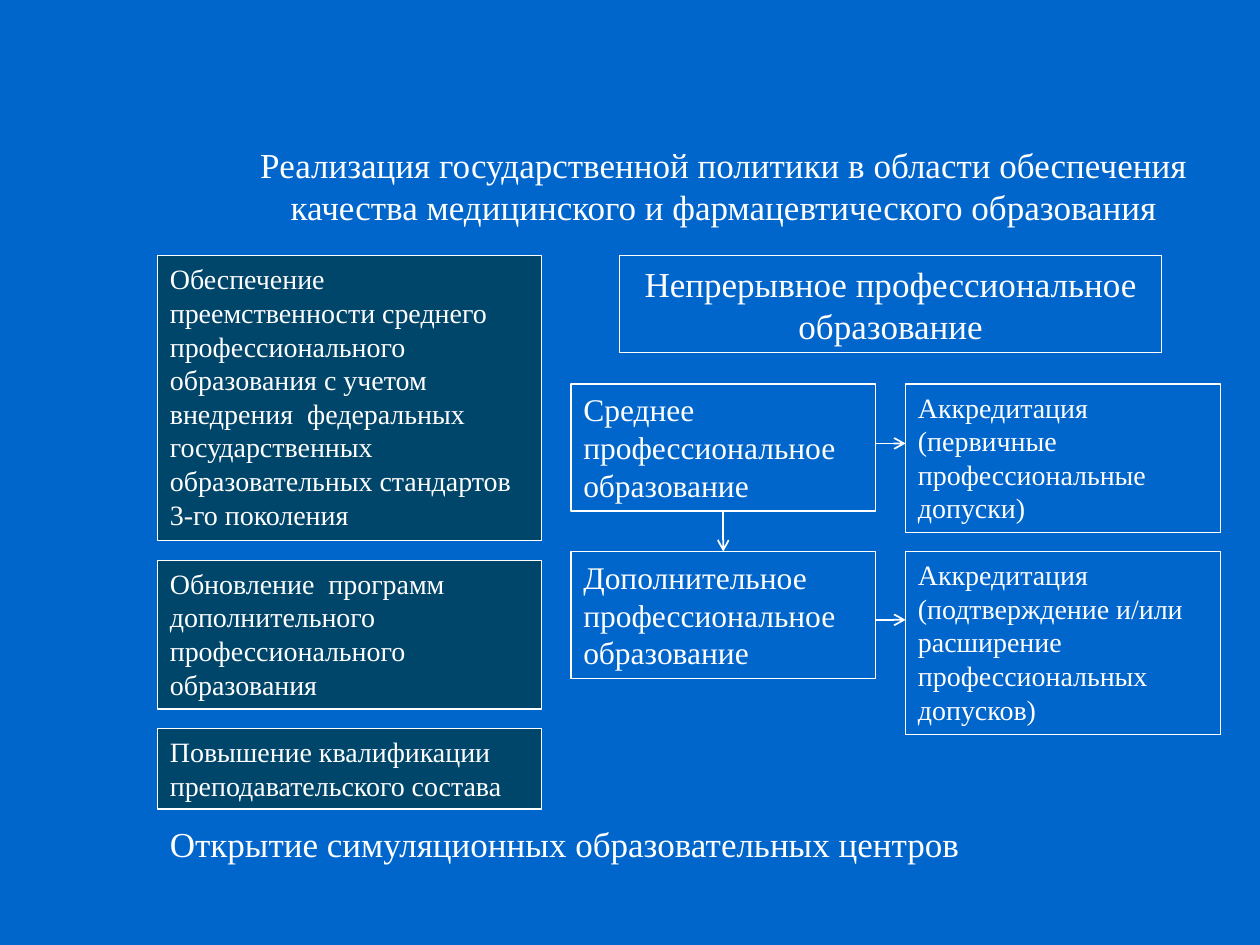
from dataclasses import dataclass

from lxml import etree
from pptx import Presentation
from pptx.dml.color import RGBColor
from pptx.enum.shapes import MSO_CONNECTOR, MSO_SHAPE
from pptx.enum.text import MSO_ANCHOR, MSO_AUTO_SIZE, PP_ALIGN
from pptx.oxml.ns import qn
from pptx.util import Pt

LEFT, CENTER = PP_ALIGN.LEFT, PP_ALIGN.CENTER
TOP = MSO_ANCHOR.TOP
FIT_SHAPE = MSO_AUTO_SIZE.SHAPE_TO_FIT_TEXT
RECTANGLE, STRAIGHT = MSO_SHAPE.RECTANGLE, MSO_CONNECTOR.STRAIGHT


@dataclass(frozen=True)
class Theme:
    font: str = "Times New Roman"
    background: RGBColor = RGBColor(0x00, 0x66, 0xCC)
    panel: RGBColor = RGBColor(0x00, 0x46, 0x6A)
    white: RGBColor = RGBColor(0xFF, 0xFF, 0xFF)
    heading: int = 20
    stage: int = 18
    body: int = 16
    border: float = 0.75
    arrow: float = 1


THEME = Theme()

TITLE = ("Реализация государственной политики в области обеспечения "
         "качества медицинского и фармацевтического образования")
CONTINUOUS = "Непрерывное профессиональное образование"
CENTERS = "Открытие симуляционных образовательных центров"

# Left column: text and box height
MEASURES = [
    ("Обеспечение преемственности среднего  профессионального образования с учетом "
     "внедрения  федеральных государственных  образовательных стандартов 3-го поколения", 162.7),
    ("Обновление  программ дополнительного профессионального образования", 85),
    ("Повышение квалификации преподавательского состава", 46),
]
# Right grid: stage, accreditation, accreditation box height, top, arrow offset from top
STAGES = [
    ("Среднее профессиональное образование",
     "Аккредитация (первичные профессиональные допуски)", 85, 219.4, 34),
    ("Дополнительное  профессиональное образование",
     "Аккредитация (подтверждение и/или расширение профессиональных допусков)",
     104.4, 315.2, 39),
]

MEASURE_LEFT, MEASURE_TOP, MEASURE_WIDTH, MEASURE_GAP = 90, 146.2, 219.6, 11.2
STAGE_LEFT, STAGE_WIDTH, STAGE_HEIGHT = 326.2, 174.2, 72.7
ACCREDITATION_LEFT, ACCREDITATION_WIDTH = 517.5, 180
DOWN_ARROW_LEFT = 413.3


def add_text(slide, text, left, top, width, height, *, size, align=LEFT, boxed=True, fill=None):
    """Add text in a bordered rectangle, or in a plain text box when not boxed."""
    bounds = [Pt(value) for value in (left, top, width, height)]
    if boxed:
        shape = slide.shapes.add_shape(RECTANGLE, *bounds)
        shape.shadow.inherit = False
        shape.line.color.rgb = THEME.white
        shape.line.width = Pt(THEME.border)
        if fill is None:
            shape.fill.background()
        else:
            shape.fill.solid()
            shape.fill.fore_color.rgb = fill
    else:
        shape = slide.shapes.add_textbox(*bounds)
    frame = shape.text_frame
    frame.word_wrap = True
    frame.auto_size = FIT_SHAPE
    frame.vertical_anchor = TOP
    paragraph = frame.paragraphs[0]
    paragraph.text = text
    paragraph.alignment = align
    paragraph.font.name = THEME.font
    paragraph.font.size = Pt(size)
    paragraph.font.color.rgb = THEME.white


def add_arrow(slide, *ends):
    connector = slide.shapes.add_connector(STRAIGHT, *[Pt(value) for value in ends])
    connector.line.color.rgb = THEME.white
    connector.line.width = Pt(THEME.arrow)
    properties = connector.line._get_or_add_ln()
    etree.SubElement(properties, qn("a:tailEnd"), type="arrow")
    etree.SubElement(connector._element.spPr, qn("a:effectLst"))


def add_measures(slide):
    top = MEASURE_TOP
    for text, height in MEASURES:
        add_text(slide, text, MEASURE_LEFT, top, MEASURE_WIDTH, height,
                 size=THEME.body, fill=THEME.panel)
        top += height + MEASURE_GAP


def add_stages(slide):
    for stage, accreditation, height, top, arrow_offset in STAGES:
        add_text(slide, stage, STAGE_LEFT, top, STAGE_WIDTH, STAGE_HEIGHT, size=THEME.stage)
        add_text(slide, accreditation, ACCREDITATION_LEFT, top, ACCREDITATION_WIDTH, height,
                 size=THEME.body)
        arrow_top = top + arrow_offset
        add_arrow(slide, STAGE_LEFT + STAGE_WIDTH, arrow_top, ACCREDITATION_LEFT, arrow_top)
    first_top, second_top = (stage[3] for stage in STAGES)
    add_arrow(slide, DOWN_ARROW_LEFT, first_top + STAGE_HEIGHT, DOWN_ARROW_LEFT, second_top)


def main():
    presentation = Presentation()
    presentation.slide_width, presentation.slide_height = Pt(720), Pt(540)
    slide = presentation.slides.add_slide(presentation.slide_layouts[6])
    slide.background.fill.solid()
    slide.background.fill.fore_color.rgb = THEME.background

    add_text(slide, TITLE, 129.6, 78.5, 568, 55.4, size=THEME.heading, align=CENTER, boxed=False)
    add_text(slide, CONTINUOUS, 354.2, 146.2, 309.6, 55.4, size=THEME.heading, align=CENTER)
    add_measures(slide)
    add_stages(slide)
    add_text(slide, CENTERS, 90, 466.6, 551.5, 31.7, size=THEME.heading, boxed=False)
    presentation.save("out.pptx")


if __name__ == "__main__":
    main()
